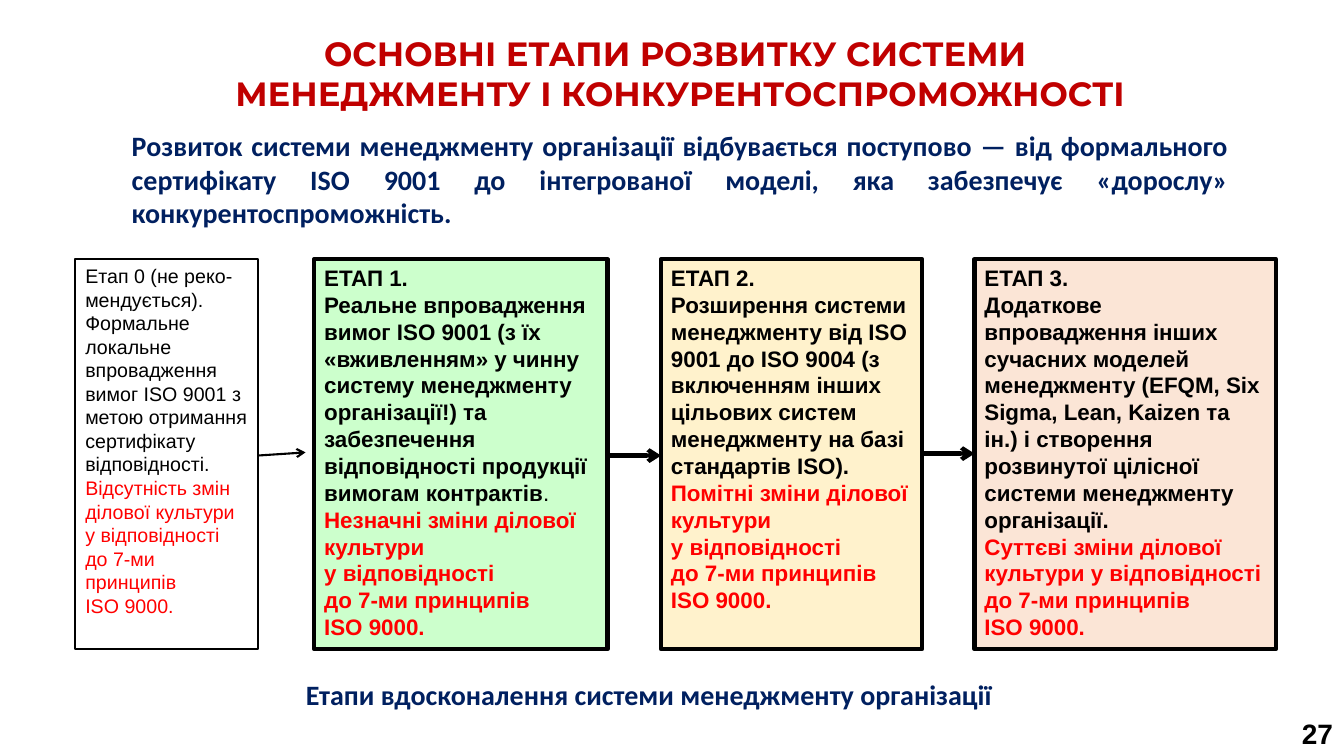
from pptx import Presentation
from pptx.dml.color import RGBColor
from pptx.enum.shapes import MSO_CONNECTOR, MSO_SHAPE
from pptx.enum.text import MSO_ANCHOR as Anchor, MSO_AUTO_SIZE as AutoSize, PP_ALIGN as Align
from pptx.oxml.ns import qn
from pptx.util import Cm, Pt
from lxml.etree import SubElement

COLORS = {
    "title": "C00000", "navy": "002060", "black": "000000", "red": "FF0000",
    "white": "FFFFFF", "green": "CCFFCC", "yellow": "FFF2CC", "peach": "FBE5D6",
}


def add_run(paragraph, text, font, size, color, bold=True):
    run = paragraph.add_run()
    run.text = text
    run.font.name = font
    run.font.size = Pt(size)
    run.font.bold = bold
    run.font.color.rgb = RGBColor.from_string(COLORS[color])


def add_label(box, text, font, color, align, wrap):
    left, top, width, height = box
    frame = slide.shapes.add_textbox(Cm(left), Cm(top), Cm(width), Cm(height)).text_frame
    frame.word_wrap = wrap
    frame.vertical_anchor = Anchor.MIDDLE
    frame.paragraphs[0].alignment = align
    add_run(frame.paragraphs[0], text, font, 20, color)


presentation = Presentation()
presentation.slide_width = Cm(33.87)
presentation.slide_height = Cm(19.05)
slide = presentation.slides.add_slide(presentation.slide_layouts[5])

# Title
title = slide.shapes.title
title.left, title.top, title.width, title.height = Cm(-0.05), Cm(0.69), Cm(33.87), Cm(2.31)
frame = title.text_frame
frame.word_wrap = True
frame.auto_size = AutoSize.NONE
frame.vertical_anchor = Anchor.TOP
title_lines = ["ОСНОВНІ ЕТАПИ РОЗВИТКУ СИСТЕМИ ", "МЕНЕДЖМЕНТУ І КОНКУРЕНТОСПРОМОЖНОСТІ"]
for index, line in enumerate(title_lines):
    paragraph = frame.add_paragraph() if index else frame.paragraphs[0]
    paragraph.alignment = Align.CENTER
    paragraph.space_before = Pt(0)
    paragraph._p.get_or_add_pPr().set("indent", str(Cm(0.5)))
    add_run(paragraph, line, "Montserrat", 24, "title")

# Introduction, caption and page number
add_label((3.07, 3.1, 28.14, 2.82),
          "Розвиток системи менеджменту організації відбувається поступово — від формального "
          "сертифікату ISO 9001 до інтегрованої моделі, яка забезпечує «дорослу» "
          "конкурентоспроможність.", "Calibri", "navy", Align.JUSTIFY, True)
add_label((7.39, 16.94, 17.93, 1.12), "Етапи вдосконалення системи менеджменту організації",
          "Calibri", "navy", Align.CENTER, False)
add_label((32.56, 17.93, 1.3, 1.12), "27", "Arial", "black", Align.LEFT, False)

# Stages: left, width, fill, line width, text size, bold, black lines, red lines
stages = [
    (1.9, 4.6, "white", 1.5, 14, False,
     ["Етап 0 (не реко-мендується).",
      "Формальне локальне впровадження вимог ІSО 9001 з метою отримання сертифікату "
      "відповідності."],
     ["Відсутність змін ділової культури", "у відповідності"]),
    (7.92, 7.39, "green", 3, 16, True,
     ["ЕТАП 1.",
      "Реальне впровадження вимог ІSО 9001 (з їх «вживленням» у чинну систему менеджменту "
      "організації!) та забезпечення відповідності продукції вимогам контрактів"],
     ["Незначні зміни ділової культури", "у відповідності"]),
    (16.66, 6.58, "yellow", 3, 16, True,
     ["ЕТАП 2.",
      "Розширення системи менеджменту від ІSО 9001 до ІSО 9004 (з включенням інших цільових "
      "систем менеджменту на базі стандартів ІSО)."],
     ["Помітні зміни ділової культури", "у відповідності"]),
    (24.56, 7.59, "peach", 3, 16, True,
     ["ЕТАП 3.",
      "Додаткове впровадження інших сучасних моделей менеджменту (EFQM, Six Sigma, Lean, "
      "Kaizen та ін.) і створення розвинутої цілісної системи менеджменту організації."],
     ["Суттєві зміни ділової культури у відповідності"]),
]
shared_ending = ["до 7-ми принципів", "ІSО 9000."]

for left, width, fill, line_width, size, bold, description, changes in stages:
    shape = slide.shapes.add_shape(MSO_SHAPE.RECTANGLE, Cm(left), Cm(6.53), Cm(width), Cm(9.83))
    shape.shadow.inherit = False
    shape.fill.solid()
    shape.fill.fore_color.rgb = RGBColor.from_string(COLORS[fill])
    shape.line.color.rgb = RGBColor.from_string(COLORS["black"])
    shape.line.width = Pt(line_width)
    frame = shape.text_frame
    frame.word_wrap = True
    frame.vertical_anchor = Anchor.TOP
    lines = [(text, "black") for text in description]
    lines += [(text, "red") for text in changes + shared_ending]
    for index, (text, color) in enumerate(lines):
        paragraph = frame.add_paragraph() if index else frame.paragraphs[0]
        paragraph.alignment = Align.LEFT
        add_run(paragraph, text, "Arial", size, color, bold)
        if text.endswith("контрактів"):
            add_run(paragraph, ".", "Arial", size, color, False)

# Arrows between the stages
arrows = [
    (6.48, 11.48, 7.7, 11.4, 1.5),
    (15.29, 11.48, 16.66, 11.48, 3),
    (23.24, 11.43, 24.56, 11.43, 3),
]
for start_x, start_y, end_x, end_y, line_width in arrows:
    arrow = slide.shapes.add_connector(
        MSO_CONNECTOR.STRAIGHT, Cm(start_x), Cm(start_y), Cm(end_x), Cm(end_y))
    arrow.line.color.rgb = RGBColor.from_string(COLORS["black"])
    arrow.line.width = Pt(line_width)
    SubElement(arrow.line._get_or_add_ln(), qn("a:tailEnd"), type="arrow")
    SubElement(arrow._element.spPr, qn("a:effectLst"))

presentation.save("out.pptx")
